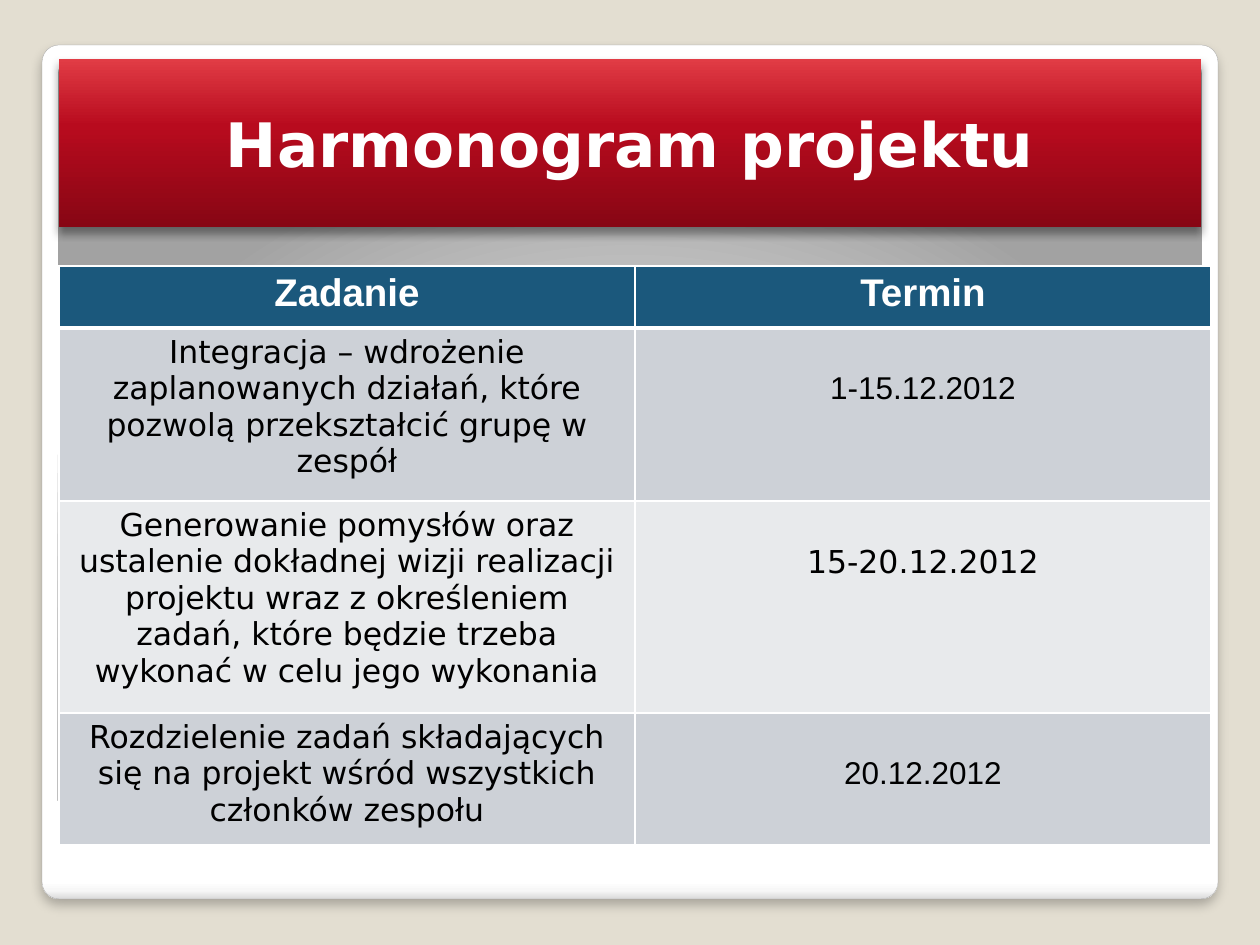
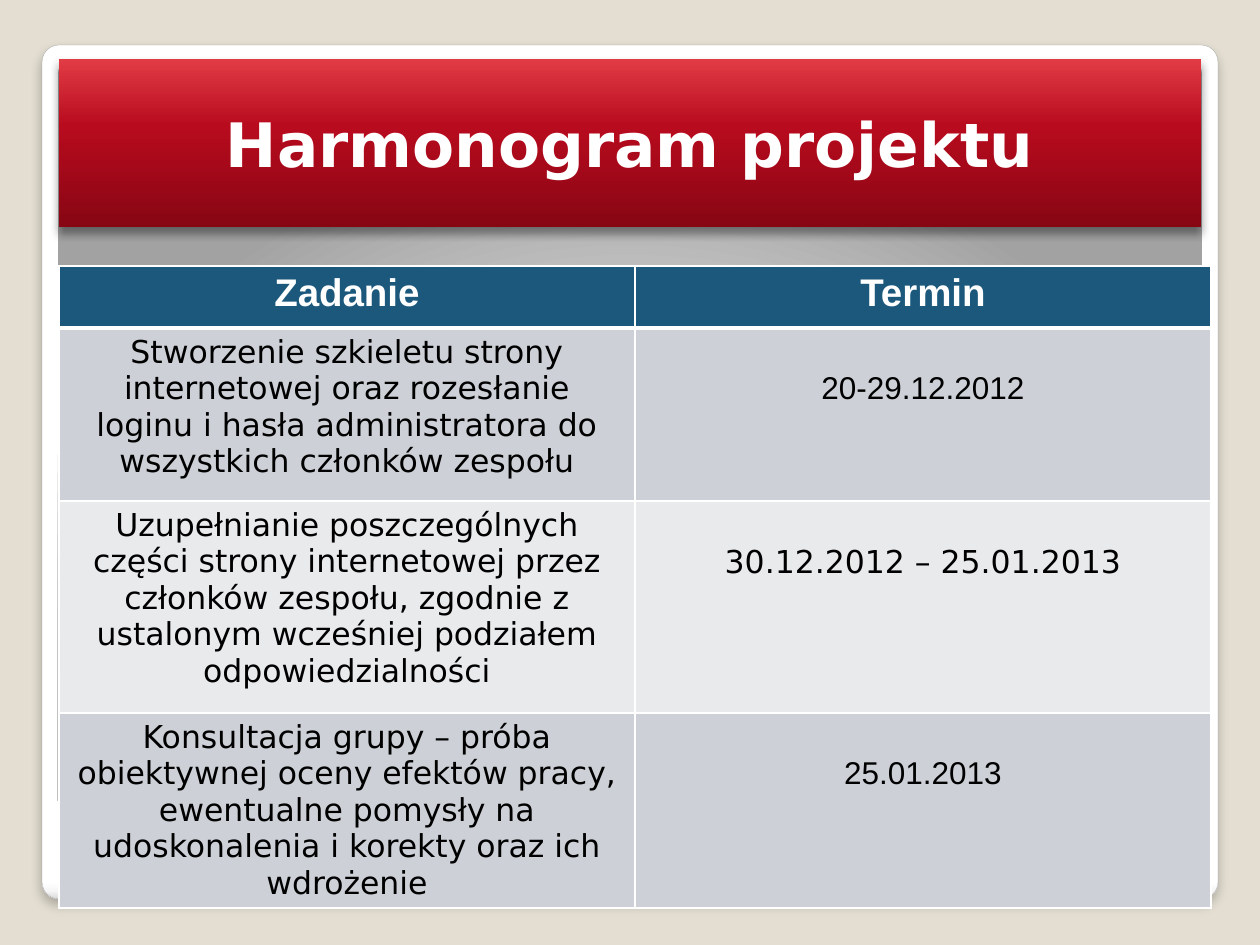
from lxml import etree
from pptx import Presentation
from pptx.dml.color import RGBColor
from pptx.enum.shapes import MSO_SHAPE
from pptx.enum.text import MSO_ANCHOR, PP_ALIGN
from pptx.oxml.ns import nsdecls
from pptx.util import Pt

ROUNDED = MSO_SHAPE.ROUNDED_RECTANGLE
CENTER = PP_ALIGN.CENTER
TOP, MIDDLE = MSO_ANCHOR.TOP, MSO_ANCHOR.MIDDLE
PX = 914400 / 126
NS = nsdecls("a")
rgb = RGBColor.from_string

WHITE, BLACK, BEIGE = "FFFFFF", "000000", "E3DED1"
HEADER_BLUE, BAND_DARK, BAND_LIGHT = "1B587C", "CDD1D7", "E8EAEC"
SANS, HEADER_FONT = "DejaVu Sans", "Arial"

DOWNWARD = '<a:lin ang="5400000" scaled="0"/>'
UPWARD = '<a:lin ang="16200000" scaled="0"/>'
FROM_BELOW = ('<a:path path="circle"><a:fillToRect l="50000" t="175000" '
              'r="50000" b="-75000"/></a:path>')
FRAME_STOPS = [(0, WHITE), (98, WHITE), (99, "F7F7F7"), (100, "DADADA")]
PANEL_STOPS = [(0, WHITE), (55, "E1E1E1"), (100, "A2A2A2")]
TITLE_STOPS = [(0, "870614"), (60, "B80B1E"), (100, "E13C45")]

TITLE = "Harmonogram projektu"
HEADINGS = ["Zadanie", "Termin"]
COLUMN_WIDTH = 576
ROW_HEIGHTS = [62, 173, 212, 132]
CELL_MARGIN, DATE_MARGIN = 6, 43
DATE_FONTS = ["Arial", SANS, "Arial"]
SCHEDULES = [
    [("Integracja – wdrożenie zaplanowanych działań, które pozwolą "
      "przekształcić grupę w zespół", "1-15.12.2012"),
     ("Generowanie pomysłów oraz ustalenie dokładnej wizji realizacji projektu "
      "wraz z określeniem zadań, które będzie trzeba wykonać w celu jego wykonania",
      "15-20.12.2012"),
     ("Rozdzielenie zadań składających się na projekt wśród wszystkich "
      "członków zespołu", "20.12.2012")],
    [("Stworzenie szkieletu strony internetowej oraz rozesłanie loginu i hasła "
      "administratora do wszystkich członków zespołu", "20-29.12.2012"),
     ("Uzupełnianie poszczególnych części strony internetowej przez członków "
      "zespołu, zgodnie z ustalonym wcześniej podziałem odpowiedzialności",
      "30.12.2012 – 25.01.2013"),
     ("Konsultacja grupy – próba obiektywnej oceny efektów pracy, ewentualne "
      "pomysły na udoskonalenia i korekty oraz ich wdrożenie", "25.01.2013")],
]


def write(frame, text, size=18, font=SANS, colour=BLACK, bold=False):
    para = frame.paragraphs[0]
    para.alignment = CENTER
    span = para.add_run()
    span.text = text
    span.font.size = Pt(size)
    span.font.name = font
    span.font.bold = bold
    span.font.color.rgb = rgb(colour)


def add_gradient(shape, stops, direction, shadow=None):
    """Give a shape a gradient and a shadow of (alpha %, blur pt, distance pt)."""
    marks = "".join(f'<a:gs pos="{pos * 1000}"><a:srgbClr val="{colour}"/></a:gs>'
                    for pos, colour in stops)
    effect = ""
    if shadow:
        alpha, blur, distance = shadow
        effect = (f'<a:outerShdw blurRad="{Pt(blur)}" dist="{Pt(distance)}" '
                  f'dir="5400000" algn="t" rotWithShape="0"><a:srgbClr val="{BLACK}">'
                  f'<a:alpha val="{alpha * 1000}"/></a:srgbClr></a:outerShdw>')
    properties = shape._element.spPr
    properties.append(etree.fromstring(
        f'<a:gradFill {NS} rotWithShape="1"><a:gsLst>{marks}</a:gsLst>{direction}</a:gradFill>'))
    properties.append(etree.fromstring(f'<a:effectLst {NS}>{effect}</a:effectLst>'))


deck = Presentation()
deck.slide_width, deck.slide_height = round(1260 * PX), round(945 * PX)
layout = deck.slide_layouts[5]
layout.background.fill.solid()
layout.background.fill.fore_color.rgb = rgb(BEIGE)
for holder in list(layout.placeholders)[1:]:
    holder._element.getparent().remove(holder._element)
pages = [deck.slides.add_slide(layout) for _ in SCHEDULES]

# The frame and the panel are made once and moved to the shared layout
frame, panel = [
    pages[0].shapes.add_shape(ROUNDED, *(round(length * PX) for length in place))
    for place in [(42, 45, 1176, 854), (58, 59, 1144, 756)]]
add_gradient(frame, FRAME_STOPS, DOWNWARD, shadow=(25, 6, 4))
add_gradient(panel, PANEL_STOPS, FROM_BELOW)
frame.line.color.rgb = rgb("A4A4A4")
frame.line.width = Pt(0.16)
panel.line.fill.background()
for index, backdrop in enumerate([frame, panel]):
    backdrop.adjustments[0] = 0.02
    layout.shapes._spTree.insert(2 + index, backdrop._element)

for page, schedule in zip(pages, SCHEDULES):
    title = page.shapes.title
    title.left, title.top, title.width, title.height = (
        round(length * PX) for length in (59, 59, 1142, 168))
    title._element.spPr.append(etree.fromstring(
        f'<a:prstGeom {NS} prst="roundRect"><a:avLst/></a:prstGeom>'))
    add_gradient(title, TITLE_STOPS, UPWARD, shadow=(40, 5.2, 3))
    title.text_frame.vertical_anchor = MIDDLE
    write(title.text_frame, TITLE, size=35, colour=WHITE, bold=True)

    table = page.shapes.add_table(
        len(ROW_HEIGHTS), len(HEADINGS), round(59 * PX), round(266 * PX),
        round(len(HEADINGS) * COLUMN_WIDTH * PX), round(sum(ROW_HEIGHTS) * PX)).table
    table.horz_banding = False
    for column in table.columns:
        column.width = round(COLUMN_WIDTH * PX)
    for r, (height, texts) in enumerate(zip(ROW_HEIGHTS, [HEADINGS] + schedule)):
        table.rows[r].height = round(height * PX)
        for c, text in enumerate(texts):
            cell = table.cell(r, c)
            cell.vertical_anchor = TOP
            is_date = r > 0 and c == 1
            cell.margin_top = round((DATE_MARGIN if is_date else CELL_MARGIN) * PX)
            cell.fill.solid()
            if r == 0:
                cell.fill.fore_color.rgb = rgb(HEADER_BLUE)
                write(cell.text_frame, text, size=22, font=HEADER_FONT,
                      colour=WHITE, bold=True)
            else:
                cell.fill.fore_color.rgb = rgb(BAND_DARK if r % 2 else BAND_LIGHT)
                write(cell.text_frame, text, font=DATE_FONTS[r - 1] if is_date else SANS)
            widths = {"L": 1, "R": 1, "T": 3 if r == 1 else 1, "B": 3 if r == 0 else 1}
            for index, (side, width) in enumerate(widths.items()):
                cell._tc.tcPr.insert(index, etree.fromstring(
                    f'<a:ln{side} {NS} w="{Pt(width)}"><a:solidFill>'
                    f'<a:srgbClr val="{WHITE}"/></a:solidFill></a:ln{side}>'))

deck.save("out.pptx")
